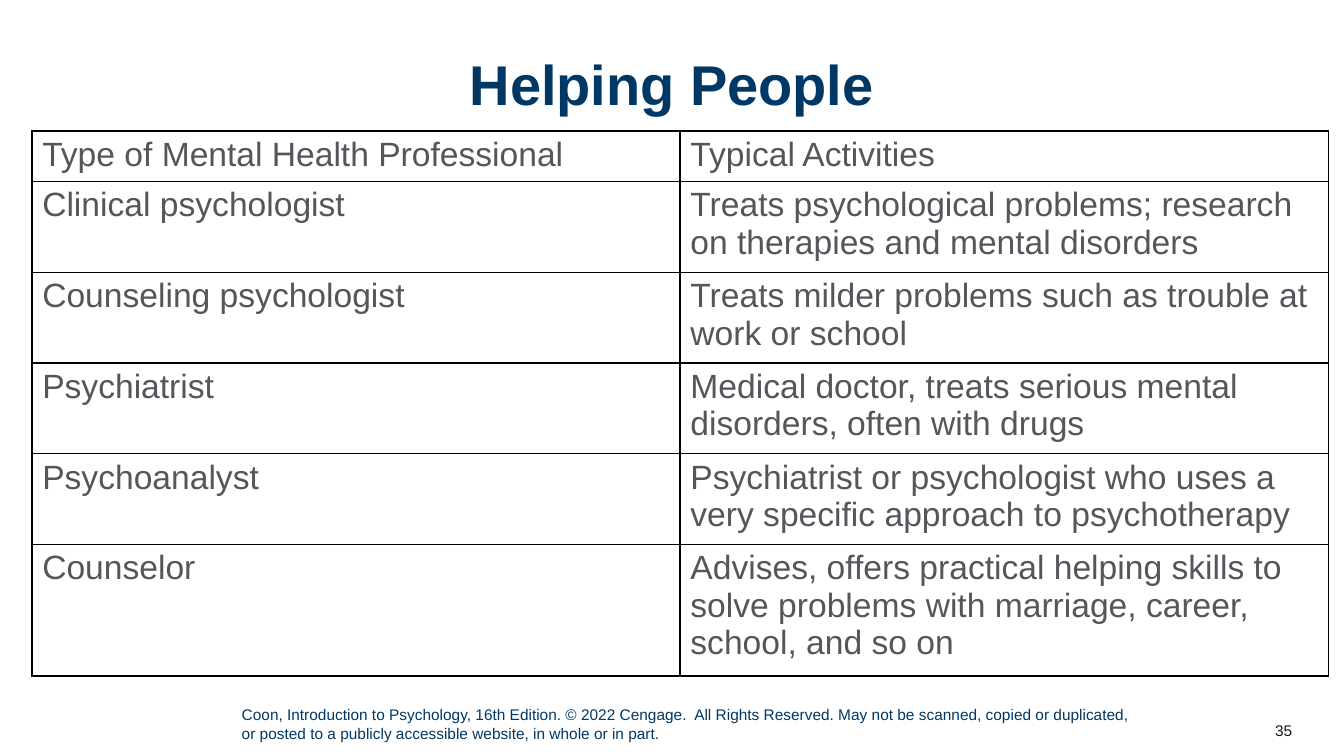
from lxml.etree import SubElement
from pptx import Presentation
from pptx.dml.color import RGBColor
from pptx.enum.text import MSO_ANCHOR, MSO_AUTO_SIZE, PP_ALIGN
from pptx.oxml.ns import qn
from pptx.util import Pt

COLORS = {"navy": "003865", "gray": "53565A", "ink": "181717",
          "line": "000000", "paper": "FFFFFF"}
ROWS = [
    ("Type of Mental Health Professional", "Typical Activities"),
    ("Clinical psychologist",
     "Treats psychological problems; research on therapies and mental disorders"),
    ("Counseling psychologist",
     "Treats milder problems such as trouble at work or school"),
    ("Psychiatrist",
     "Medical doctor, treats serious mental disorders, often with drugs"),
    ("Psychoanalyst",
     "Psychiatrist or psychologist who uses a very specific approach to psychotherapy"),
    ("Counselor",
     "Advises, offers practical helping skills to solve problems with marriage, "
     "career, school, and so on"),
]
NOTICE = ("Coon, Introduction to Psychology, 16th Edition. © 2022 Cengage.  "
          "All Rights Reserved. May not be scanned, copied or duplicated, or posted "
          "to a publicly accessible website, in whole or in part.")


class Page:
    def __init__(self, slide, face="Arial"):
        self.slide = slide
        self.face = face

    def words(self, frame, text, size, color, bold=False, **form):
        frame.text = text
        line = frame.paragraphs[0]
        for key, value in form.items():
            setattr(line, key, value)
        style = {"name": self.face, "size": Pt(size), "bold": bold}
        font = line.runs[0].font
        for key, value in style.items():
            setattr(font, key, value)
        font.color.rgb = RGBColor.from_string(COLORS[color])

    def title(self, text, box):
        shape = self.slide.shapes.title
        for key, value in zip(("left", "top", "width", "height"), box):
            setattr(shape, key, Pt(value))
        frame = shape.text_frame
        frame.auto_size = MSO_AUTO_SIZE.NONE
        frame.vertical_anchor = MSO_ANCHOR.TOP
        self.words(frame, text, 40, "navy", True,
                   alignment=PP_ALIGN.CENTER, line_spacing=0.9)

    def label(self, text, box, color, align, anchor):
        frame = self.slide.shapes.add_textbox(*map(Pt, box)).text_frame
        frame.word_wrap = True
        frame.vertical_anchor = anchor
        self.words(frame, text, 11, color, alignment=align)

    def border(self, cell, edges):
        props = cell._tc.get_or_add_tcPr()
        for spot, (side, width) in enumerate(edges.items()):
            line = SubElement(props, qn(f"a:ln{side}"), w=str(Pt(width)))
            fill = SubElement(line, qn("a:solidFill"))
            SubElement(fill, qn("a:srgbClr"), val=COLORS["line"])
            props.insert(spot, line)

    def table(self, rows, box, head, body):
        grid = self.slide.shapes.add_table(
            len(rows), len(rows[0]), *map(Pt, box)).table
        for flag in ("first_row", "horz_banding"):
            setattr(grid, flag, False)
        for r, texts in enumerate(rows):
            grid.rows[r].height = Pt(body if r else head)
            for c, text in enumerate(texts):
                cell = grid.cell(r, c)
                self.words(cell.text_frame, text, 24, "gray")
                cell.fill.solid()
                cell.fill.fore_color.rgb = RGBColor.from_string(COLORS["paper"])
                # Heavier frame and column rule, thin row rules
                self.border(cell, {"L": 1.5, "R": 1.5, "T": 1 if r else 1.5,
                                   "B": 1 if r < len(rows) - 1 else 1.5})


def main():
    deck = Presentation()
    deck.slide_width, deck.slide_height = Pt(960), Pt(540)
    page = Page(deck.slides.add_slide(deck.slide_layouts[5]))

    # Footer
    page.label("35", (872.6, 507.6, 57.6, 28.8), "ink",
               PP_ALIGN.RIGHT, MSO_ANCHOR.MIDDLE)
    page.label(NOTICE, (165.6, 500.4, 652.3, 47.5), "navy",
               PP_ALIGN.LEFT, MSO_ANCHOR.TOP)

    # Title and table of professions
    page.title("Helping People", (37.4, 37.4, 884.9, 95.8))
    page.table(ROWS, (23, 93.6, 926, 388.8), head=35.3, body=61.4)

    deck.save("out.pptx")


if __name__ == "__main__":
    main()
